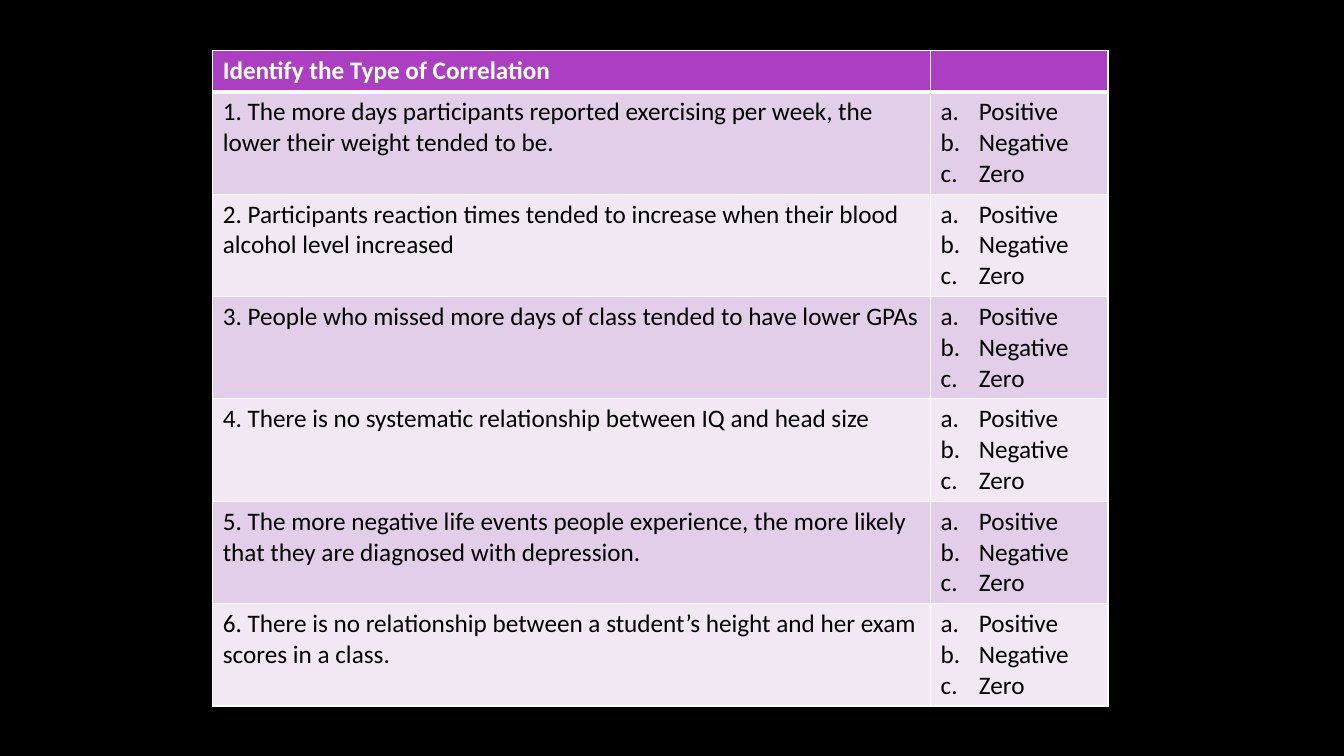
from lxml import etree
from pptx import Presentation
from pptx.dml.color import RGBColor
from pptx.oxml.ns import qn
from pptx.util import Inches, Pt

THEME = {
    "font": "Calibri", "size": Pt(18),
    "back": RGBColor.from_string("000000"),
    "head": RGBColor.from_string("AC3EC1"),
    "bands": [RGBColor.from_string("E3CEE9"), RGBColor.from_string("F1E8F4")],
    "light": RGBColor.from_string("FFFFFF"),
    "dark": RGBColor.from_string("000000"),
}
TITLE = "Identify the Type of Correlation"
ITEMS = [
    "1. The more days participants reported exercising per week, the lower their weight tended to be.",
    "2. Participants reaction times tended to increase when their blood alcohol level increased",
    "3. People who missed more days of class tended to have lower GPAs",
    "4. There is no systematic relationship between IQ and head size",
    "5. The more negative life events people experience, the more likely that they are diagnosed with depression.",
    "6. There is no relationship between a student’s height and her exam scores in a class.",
]
CHOICES = ["Positive", "Negative", "Zero"]


def edge(cell, side, width):
    """Draw one border of a cell."""
    line = etree.SubElement(cell._tc.get_or_add_tcPr(), qn("a:" + side), w=str(Pt(width)))
    fill = etree.SubElement(line, qn("a:solidFill"))
    etree.SubElement(fill, qn("a:srgbClr"), val=str(THEME["light"]))


def letter(para):
    """Number a paragraph a., b., c. with a hanging indent."""
    props = para._p.get_or_add_pPr()
    props.set("marL", str(Inches(0.38)))
    props.set("indent", str(Inches(-0.38)))
    etree.SubElement(props, qn("a:buFont"), typeface="+mj-lt")
    etree.SubElement(props, qn("a:buAutoNum"), type="alphaLcPeriod")


# Slide
deck = Presentation()
deck.slide_width, deck.slide_height = Inches(13.33), Inches(7.5)
slide = deck.slides.add_slide(deck.slide_layouts[6])
slide.background.fill.solid()
slide.background.fill.fore_color.rgb = THEME["back"]

# Table grid
rows = [(TITLE, [])] + [(item, CHOICES) for item in ITEMS]
table = slide.shapes.add_table(len(rows), 2, Inches(2.11), Inches(0.5),
                               Inches(8.88), Inches(6.47)).table
for col, width in zip(table.columns, [7.12, 1.76]):
    col.width = Inches(width)

# Questions on the left, choices on the right
for i, (item, picks) in enumerate(rows):
    top = i == 0
    table.rows[i].height = Inches(0.41 if top else 1.01)
    look = {"name": THEME["font"], "size": THEME["size"], "bold": top}
    for j, text in enumerate([item, "\n".join(picks)]):
        cell = table.cell(i, j)
        for side in ["lnL", "lnR", "lnT", "lnB"]:
            thick = (top and side == "lnB") or (i == 1 and side == "lnT")
            edge(cell, side, 3 if thick else 1)
        cell.fill.solid()
        cell.fill.fore_color.rgb = THEME["head"] if top else THEME["bands"][(i - 1) % 2]
        cell.text = text
        for para in cell.text_frame.paragraphs:
            if j == 1 and picks:
                letter(para)
            for font in [para.font] + [run.font for run in para.runs]:
                for key, value in look.items():
                    setattr(font, key, value)
                font.color.rgb = THEME["light"] if top else THEME["dark"]

deck.save("out.pptx")
